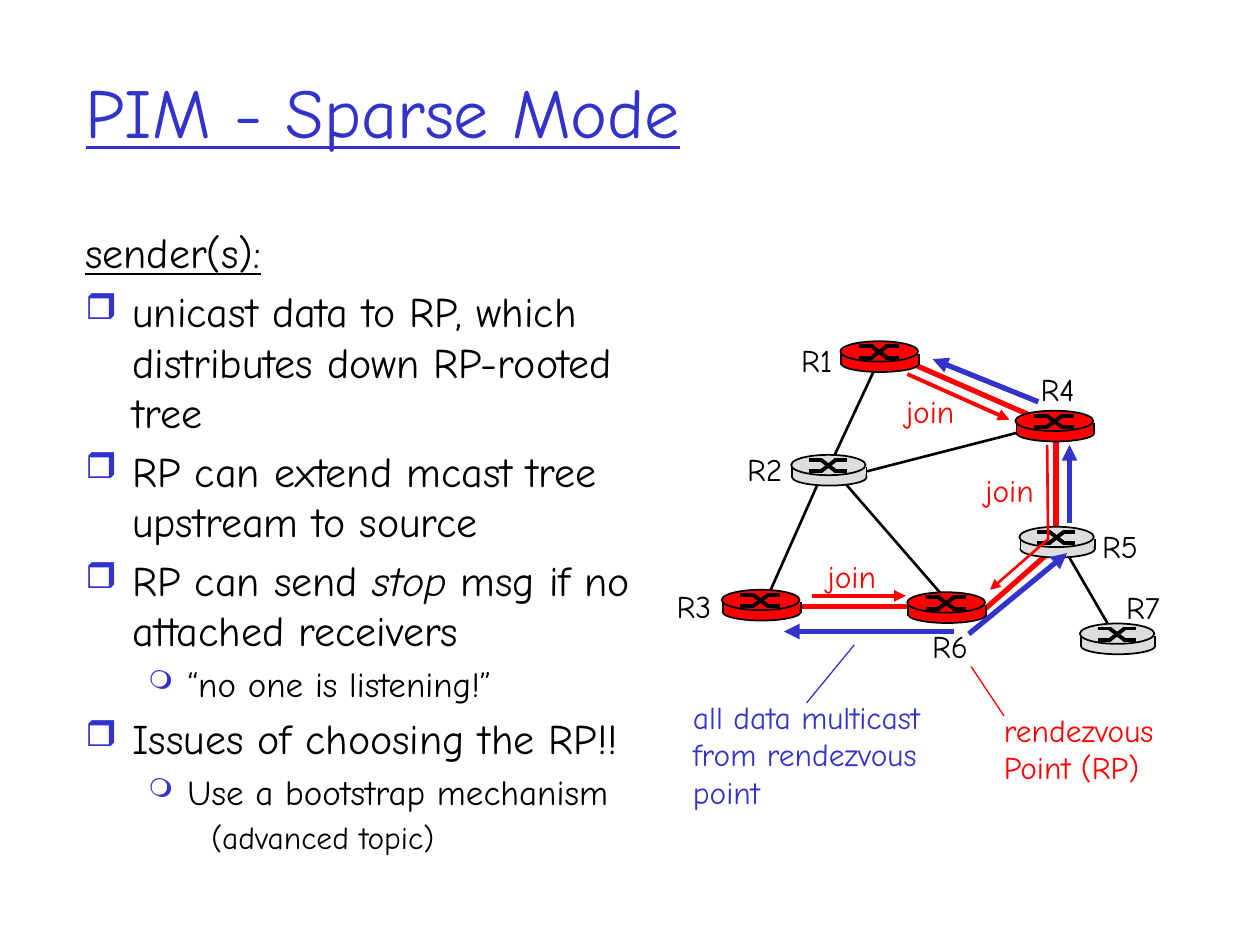
from dataclasses import dataclass

from lxml import etree
from pptx import Presentation
from pptx.dml.color import RGBColor
from pptx.enum.shapes import MSO_CONNECTOR, MSO_SHAPE
from pptx.enum.text import MSO_ANCHOR, MSO_AUTO_SIZE, PP_ALIGN
from pptx.oxml.ns import qn
from pptx.util import Cm, Pt

STRAIGHT = MSO_CONNECTOR.STRAIGHT
OVAL, RECTANGLE = MSO_SHAPE.OVAL, MSO_SHAPE.RECTANGLE
MIDDLE, LEFT, NO_FIT = MSO_ANCHOR.MIDDLE, PP_ALIGN.LEFT, MSO_AUTO_SIZE.NONE


@dataclass(frozen=True)
class Theme:
    font: str = "Comic Neue"
    black: RGBColor = RGBColor(0x00, 0x00, 0x00)
    blue: RGBColor = RGBColor(0x33, 0x33, 0xCC)
    red: RGBColor = RGBColor(0xFF, 0x00, 0x00)
    grey: RGBColor = RGBColor(0xDD, 0xDD, 0xDD)
    title: int = 40
    body: int = 24
    detail: int = 20
    label: int = 18


theme = Theme()


def draw_line(shapes, points, color, width, arrow=False):
    """Draw a line through points given in cm: a connector, or a freeform if it bends."""
    points = [(Cm(x), Cm(y)) for x, y in points]
    if len(points) == 2:
        line = shapes.add_connector(STRAIGHT, *points[0], *points[1])
    else:
        builder = shapes.build_freeform(*points[0])
        builder.add_line_segments(points[1:], close=False)
        line = builder.convert_to_shape()
        line.fill.background()
    line.line.color.rgb = color
    line.line.width = Pt(width)
    properties = line._element.spPr
    if arrow:
        etree.SubElement(properties.find(qn("a:ln")), qn("a:tailEnd"), type="triangle")
    etree.SubElement(properties, qn("a:effectLst"))


def add_label(shapes, left, top, width, lines, color):
    box = shapes.add_textbox(Cm(left), Cm(top), Cm(width), Cm(0.25 + 0.76 * len(lines)))
    frame = box.text_frame
    frame.word_wrap = False
    frame.text = "\n".join(lines)
    for para in frame.paragraphs:
        para.font.name = theme.font
        para.font.size = Pt(theme.label)
        para.font.color.rgb = color


deck = Presentation()
deck.slide_width, deck.slide_height = Cm(25.4), Cm(19.05)
page = deck.slides.add_slide(deck.slide_layouts[5])
shapes = page.shapes

# Title
title = shapes.title
title.left, title.top, title.width, title.height = Cm(1.47), Cm(0.64), Cm(21.59), Cm(3.18)
title.text_frame.text = "PIM - Sparse Mode"
title.text_frame.vertical_anchor = MIDDLE
title.text_frame.auto_size = NO_FIT
para = title.text_frame.paragraphs[0]
para.alignment = LEFT
para.font.name = theme.font
para.font.size = Pt(theme.title)
para.font.color.rgb = theme.blue
para.font.underline = True

# Body: type size, left margin, hanging indent, bullet and its size in percent
HEAD = (theme.body, 0.95, 0.95, None, None)
ITEM = (theme.body, 0.95, 0.95, "❒", 85)
DETAIL = (theme.detail, 2.06, 0.79, "❍", 75)
NOTE = (theme.label, 3.18, 0.64, None, None)
body_lines = [
    (HEAD, ["sender(s):"]),
    (ITEM, ["unicast data to RP, which distributes down RP-rooted tree"]),
    (ITEM, ["RP can extend mcast tree upstream to source"]),
    (ITEM, ["RP can send ", "stop", " msg if no attached receivers"]),
    (DETAIL, ["“no one is listening!”"]),
    (ITEM, ["Issues of choosing the RP!!"]),
    (DETAIL, ["Use a bootstrap mechanism"]),
    (NOTE, ["(advanced topic)"]),
]
body = shapes.add_textbox(Cm(1.47), Cm(4.45), Cm(12.19), Cm(12.9)).text_frame
body.word_wrap = True
for index, (style, texts) in enumerate(body_lines):
    size, margin, hanging, bullet, bullet_size = style
    para = body.add_paragraph() if index else body.paragraphs[0]
    para.space_before = Pt(size * 0.2)
    settings = para._p.get_or_add_pPr()
    settings.set("marL", str(Cm(margin)))
    settings.set("indent", str(-Cm(hanging)))
    if bullet:
        bullet_color = etree.SubElement(settings, qn("a:buClr"))
        etree.SubElement(bullet_color, qn("a:srgbClr"), val=str(theme.blue))
        etree.SubElement(settings, qn("a:buSzPct"), val=str(bullet_size * 1000))
        etree.SubElement(settings, qn("a:buChar"), char=bullet)
    para.font.name = theme.font
    para.font.size = Pt(size)
    para.font.color.rgb = theme.black
    if style is HEAD:
        para.font.underline = True
    for text in texts:
        span = para.add_run()
        span.text = text
        if text == "stop":
            span.font.italic = True

# Links between routers: black plain, red on the tree
plain_links = [
    ((21.36, 10.9), (22.48, 12.83)),
    ((17.48, 9.5), (21.26, 8.53)),
    ((16.74, 9.4), (19.1, 12.12)),
    ((16.51, 9.7), (15.47, 12.04)),
    ((17.68, 7.34), (16.71, 9.42)),
]
tree_links = [
    ((18.36, 7.32), (21.13, 8.53)),
    ((19.84, 12.29), (21.34, 10.97)),
    ((21.29, 8.81), (21.29, 10.82)),
    ((15.82, 12.22), (18.69, 12.22)),
]
for links, color, width in ((plain_links, theme.black, 1.5), (tree_links, theme.red, 3)):
    for link in links:
        draw_line(shapes, link, color, width)

# Routers: name, left, top, fill, label left, label top
routers = [
    ("R6", 18.29, 11.94, theme.red, 18.54, 12.52),
    ("R4", 20.47, 8.28, theme.red, 20.73, 7.34),
    ("R3", 14.55, 11.89, theme.red, 13.39, 11.71),
    ("R5", 20.55, 10.62, theme.grey, 21.97, 10.49),
    ("R2", 15.95, 9.17, theme.grey, 14.81, 8.94),
    ("R1", 16.94, 6.88, theme.red, 15.9, 6.76),
    ("R7", 21.77, 12.57, theme.grey, 22.45, 11.73),
]
for name, left, top, fill, label_left, label_top in routers:
    width = 1.57 if fill == theme.red else 1.5
    router = shapes.add_group_shape().shapes
    # Cylinder: bottom, band with its two sides, top
    for kind, dx, dy, part_width, height in (
        (OVAL, 0.02, 0.28, width, 0.34),
        (RECTANGLE, 0.02, 0.25, width - 0.02, 0.21),
        (OVAL, 0, 0, width, 0.41),
    ):
        part = router.add_shape(kind, Cm(left + dx), Cm(top + dy), Cm(part_width), Cm(height))
        part.shadow.inherit = False
        part.fill.solid()
        part.fill.fore_color.rgb = fill
        if kind == RECTANGLE:
            part.line.fill.background()
            for x in (left + 0.02, left + width + 0.02):
                draw_line(router, ((x, top + 0.25), (x, top + 0.47)), theme.black, 1)
        else:
            part.line.color.rgb = theme.black
            part.line.width = Pt(1)
    # Crossed paths on the top
    high, low = top + 0.1, top + 0.33
    for start, end in ((high, low), (low, high)):
        for x1, y1, x2, y2 in (
            (0.24, start, 0.42, start),
            (0.4, start, 0.6, end),
            (0.58, end, 0.75, end),
        ):
            draw_line(router, ((left + x1 * width, y1), (left + x2 * width, y2)), theme.black, 2.25)
    add_label(shapes, label_left, label_top, 1.3, [name], theme.black)

# Join messages
draw_line(shapes, ((21.11, 8.97), (21.13, 10.87), (19.96, 11.89)), theme.red, 1.5, True)
draw_line(shapes, ((16.36, 12.01), (18.26, 12.01)), theme.red, 2.25, True)
draw_line(shapes, ((18.29, 7.54), (20.35, 8.46)), theme.red, 2.25, True)
for left, top in ((19.61, 9.37), (18.01, 7.77), (16.43, 11.1)):
    add_label(shapes, left, top, 1.6, ["join"], theme.red)

# Data flow from the rendezvous point
for flow in (
    ((19.23, 12.73), (15.8, 12.73)),
    ((19.53, 12.78), (21.51, 11.15)),
    ((21.56, 10.54), (21.56, 8.97)),
    ((20.93, 8.1), (18.8, 7.24)),
):
    draw_line(shapes, flow, theme.blue, 3, True)

# Callouts with leader lines
add_label(shapes, 13.72, 13.94, 5.61, ["all data multicast", "from rendezvous", "point"], theme.blue)
draw_line(shapes, ((16.26, 14.17), (17.22, 13)), theme.blue, 0.75)
add_label(shapes, 19.99, 14.2, 3.84, ["rendezvous", "Point (RP)"], theme.red)
draw_line(shapes, ((19.58, 13.44), (20.24, 14.43)), theme.red, 0.75)

deck.save("out.pptx")
